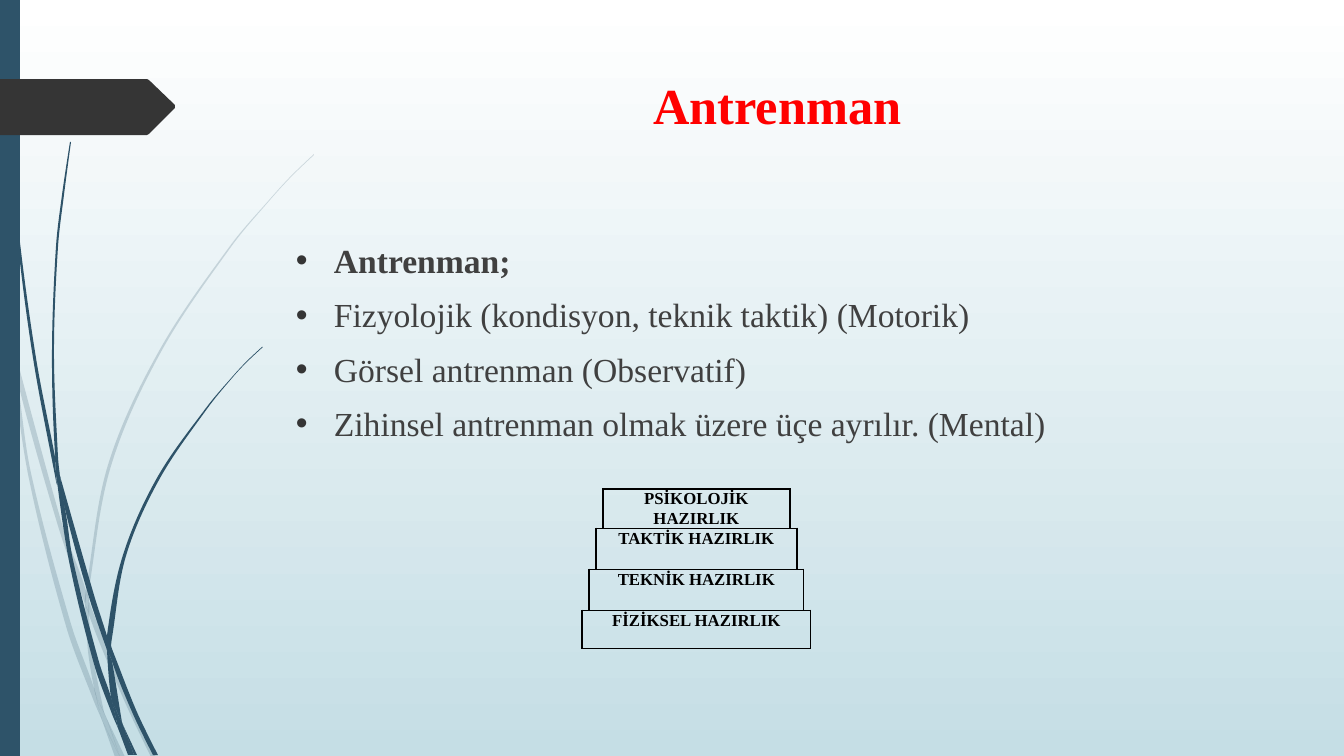
from lxml import etree
from math import dist
from pptx import Presentation
from pptx.dml.color import RGBColor
from pptx.enum.shapes import MSO_SHAPE
from pptx.enum.text import PP_ALIGN
from pptx.oxml.ns import qn
from pptx.util import Pt

SCALE = 914400 / 100.8
RECT = MSO_SHAPE.RECTANGLE
CENTER = PP_ALIGN.CENTER
FONT = "Times New Roman"
PLAIN = "{2D5ABB26-0587-4C30-8999-92F81FD0307C}"
WHITE = RGBColor(0xFF, 0xFF, 0xFF)
MIST = RGBColor(0xC5, 0xDE, 0xE5)
BLUE = RGBColor(0x2E, 0x53, 0x69)
DARK = RGBColor(0x35, 0x35, 0x35)
GRAY = RGBColor(0x40, 0x40, 0x40)
RED = RGBColor(0xFF, 0, 0)
BLACK = RGBColor(0, 0, 0)

PALE = [
    [11, 353, 9, 325, 0, 284, 0, 301, 10, 347],
    [58, 526, 85, 604, 86, 591, 62, 524, 14, 348, 17, 379],
    [93, 612, 89, 601, 89, 615, 124, 700, 151, 757, 156, 757, 128, 698],
    [120, 757, 125, 757, 106, 717],
    [94, 688, 71, 624, 31, 473, 17, 379, 11, 353, 28, 474, 66, 626, 93, 699, 102, 720, 100, 713],
    [85, 604, 88, 651, 94, 688, 97, 698, 106, 717, 104, 712, 92, 651, 89, 615, 89, 613],
    [89, 589, 111, 466, 161, 352, 231, 247, 270, 200, 292, 176, 314, 155, 314, 154, 291, 176,
     270, 199, 230, 246, 159, 351, 108, 465, 86, 589, 86, 591, 89, 601],
    [102, 720, 115, 757, 120, 757],
    [89, 613, 89, 615, 89, 601, 86, 591, 85, 604],
    [97, 698, 94, 688, 100, 713, 102, 720, 120, 757, 106, 717],
]
DEEP = [
    [7, 111, 17, 235, 33, 358, 56, 481, 57, 485, 55, 461, 55, 457, 36, 358, 19, 234, 8, 110,
     5, 48, 4, 0, 3, 0, 4, 48],
    [89, 597, 107, 650, 107, 638, 107, 636, 94, 595, 60, 476, 65, 509],
    [114, 654, 111, 646, 112, 661, 133, 714, 153, 755, 158, 755, 137, 712],
    [111, 697, 99, 662, 73, 560, 65, 509, 57, 481, 69, 561, 94, 664, 112, 714, 118, 728, 117, 723],
    [60, 476, 58, 457, 54, 352, 58, 247, 64, 195, 71, 142, 70, 142, 62, 195, 56, 247, 52, 352,
     55, 453],
    [134, 755, 137, 755, 123, 725],
    [57, 481, 65, 509, 60, 476, 55, 453, 55, 457],
    [112, 638, 126, 556, 159, 480, 207, 409, 233, 377, 247, 362, 263, 347, 262, 347, 247, 361,
     233, 376, 206, 408, 157, 478, 123, 555, 107, 636, 111, 646],
    [118, 728, 128, 755, 132, 755],
    [107, 650, 111, 697, 117, 712, 123, 725, 122, 722, 112, 661, 110, 656],
    [107, 650, 110, 656, 112, 661, 111, 646, 107, 636, 107, 638],
    [117, 712, 111, 697, 117, 723, 118, 728, 131, 755, 134, 755, 123, 725],
]
ARROW = [(0, 79), (147, 79), (149, 80), (175, 105), (175, 108), (149, 134), (147, 135), (0, 135)]
ITEMS = [
    "Antrenman;",
    "Fizyolojik (kondisyon, teknik taktik) (Motorik)",
    "Görsel antrenman (Observatif)",
    "Zihinsel antrenman olmak üzere üçe ayrılır. (Mental)",
]
STEPS = ["PSİKOLOJİK HAZIRLIK", "TAKTİK HAZIRLIK", "TEKNİK HAZIRLIK", "FİZİKSEL HAZIRLIK"]
COLS = [108, 7, 7, 7, 187, 7, 7, 7, 90]
ROWS = [39, 41, 41, 38]


def px(size):
    """Turn pixels into EMU."""
    return round(size * SCALE)


def add(node, tag, **attrs):
    """Append a drawing element to a node."""
    return etree.SubElement(node, qn(tag), **attrs)


def slope(a, b, c):
    """Give the direction of a curve at b, or none at a sharp corner."""
    turn = (b[0] - a[0]) * (c[0] - b[0]) + (b[1] - a[1]) * (c[1] - b[1])
    if turn < 0.8 * dist(a, b) * dist(b, c):
        return 0, 0
    return (c[0] - a[0]) / dist(a, c), (c[1] - a[1]) / dist(a, c)


def paint(shape, color):
    """Give a shape a flat fill with no line or shadow."""
    shape.shadow.inherit = False
    shape.fill.solid()
    shape.fill.fore_color.rgb = color
    shape.line.fill.background()


def outline(slide, spots, color):
    """Draw a closed outline."""
    ends = [(px(x), px(y)) for x, y in spots]
    pen = slide.shapes.build_freeform(*ends[0], scale=1.0)
    pen.add_line_segments(ends[1:], close=True)
    shape = pen.convert_to_shape()
    paint(shape, color)
    return shape


def stem(slide, flat, alpha=None):
    """Draw one curved piece of a grass blade."""
    spots = list(zip(flat[::2], flat[1::2]))
    after = spots[1:] + spots[:1]
    lean = [slope(*trio) for trio in zip(spots[-1:] + spots, spots, after)]
    track = [spots[0]]
    for b, c, u, v in zip(spots, after, lean, lean[1:] + lean[:1]):
        reach = dist(b, c) / 3
        track += [(b[0] + u[0] * reach, b[1] + u[1] * reach),
                  (c[0] - v[0] * reach, c[1] - v[1] * reach), c]
    shape = outline(slide, track, BLUE)
    route = next(shape.element.iter(qn("a:path")))
    lines = route.findall(qn("a:lnTo"))
    for trio in zip(lines[::3], lines[1::3], lines[2::3]):
        bend = etree.Element(qn("a:cubicBezTo"))
        trio[0].addprevious(bend)
        for line in trio:
            bend.append(line[0])
            route.remove(line)
    if alpha:
        tone = next(shape.element.iter(qn("a:srgbClr")))
        add(tone, "a:alpha", val=str(alpha * 1000))


def style(para, size, color, bold):
    """Set the font of a paragraph."""
    font = para.font
    font.name, font.size, font.bold = FONT, Pt(size), bold
    font.color.rgb = color


def box(slide, left, top, width, height):
    """Add a wrapping text box and return its frame."""
    shape = slide.shapes.add_textbox(px(left), px(top), px(width), px(height))
    shape.text_frame.word_wrap = True
    return shape.text_frame


def bullet(para):
    """Hang a round bullet before a paragraph."""
    props = para._p.get_or_add_pPr()
    props.set("marL", str(px(38)))
    props.set("indent", str(-px(38)))
    tone = etree.Element(qn("a:buClr"))
    add(tone, "a:srgbClr", val=str(DARK))
    face = etree.Element(qn("a:buFont"), typeface="Arial")
    mark = etree.Element(qn("a:buChar"), char="•")
    place = props.index(props.find(qn("a:defRPr")))
    props[place:place] = [tone, face, mark]


def points(slide):
    """Write the bulleted list."""
    frame = box(slide, 286, 235, 983, 416)
    for row, text in enumerate(ITEMS):
        para = frame.add_paragraph() if row else frame.paragraphs[0]
        para.text = text
        para.space_before = Pt(10)
        style(para, 24, GRAY, row == 0)
        bullet(para)


def border(cell, sides):
    """Rule the named sides of a cell and clear the others."""
    props = cell._tc.get_or_add_tcPr()
    for place, side in enumerate("LRTB"):
        line = etree.Element(qn(f"a:ln{side}"), w=str(Pt(1)))
        if side in sides:
            add(add(line, "a:solidFill"), "a:srgbClr", val=str(BLACK))
        else:
            add(line, "a:noFill")
        props.insert(place, line)


def tower(slide):
    """Build the stepped table of training stages."""
    frame = slide.shapes.add_table(len(ROWS), len(COLS), px(474), px(489),
                                   px(sum(COLS)), px(sum(ROWS)))
    table = frame.table
    table.first_row = table.horz_banding = False
    next(frame.element.iter(qn("a:tableStyleId"))).text = PLAIN
    for col, width in zip(table.columns, COLS):
        col.width = px(width)
    for row, height in zip(table.rows, ROWS):
        row.height = px(height)
    for row, text in enumerate(STEPS):
        first, last = 4 - row, 4 + row
        for col in range(len(COLS)):
            cell = table.cell(row, col)
            cell.fill.background()
            cell.margin_left = cell.margin_right = cell.margin_top = cell.margin_bottom = 0
            inside = first <= col <= last
            after = "LB" if row < 3 else "L"
            border(cell, "LRTB" if inside else after if col == last + 1 else "")
        for start, end in ((0, first - 1), (first, last), (last + 1, 8)):
            if start < end:
                table.cell(row, start).merge(table.cell(row, end))
        para = table.cell(row, first).text_frame.paragraphs[0]
        para.text, para.alignment, para.line_spacing = text, CENTER, Pt(14)
        para.space_before = para.space_after = Pt(1.5)
        style(para, 12, BLACK, True)


def main():
    """Build the slide and save it."""
    deck = Presentation()
    deck.slide_width, deck.slide_height = px(1344), px(756)
    slide = deck.slides.add_slide(deck.slide_layouts[6])
    fill = slide.background.fill
    fill.gradient()
    fill.gradient_angle = 270
    for stop, color in zip(fill.gradient_stops, (WHITE, MIST)):
        stop.color.rgb = color
    for blades, alpha in ((PALE, 20), (DEEP, None)):
        for flat in blades:
            stem(slide, flat, alpha)
    paint(slide.shapes.add_shape(RECT, 0, 0, px(20), px(756)), BLUE)
    outline(slide, ARROW, DARK)
    title = box(slide, 286, 69, 983, 141).paragraphs[0]
    title.text, title.alignment = "Antrenman", CENTER
    style(title, 36, RED, True)
    points(slide)
    tower(slide)
    deck.save("out.pptx")


if __name__ == "__main__":
    main()
